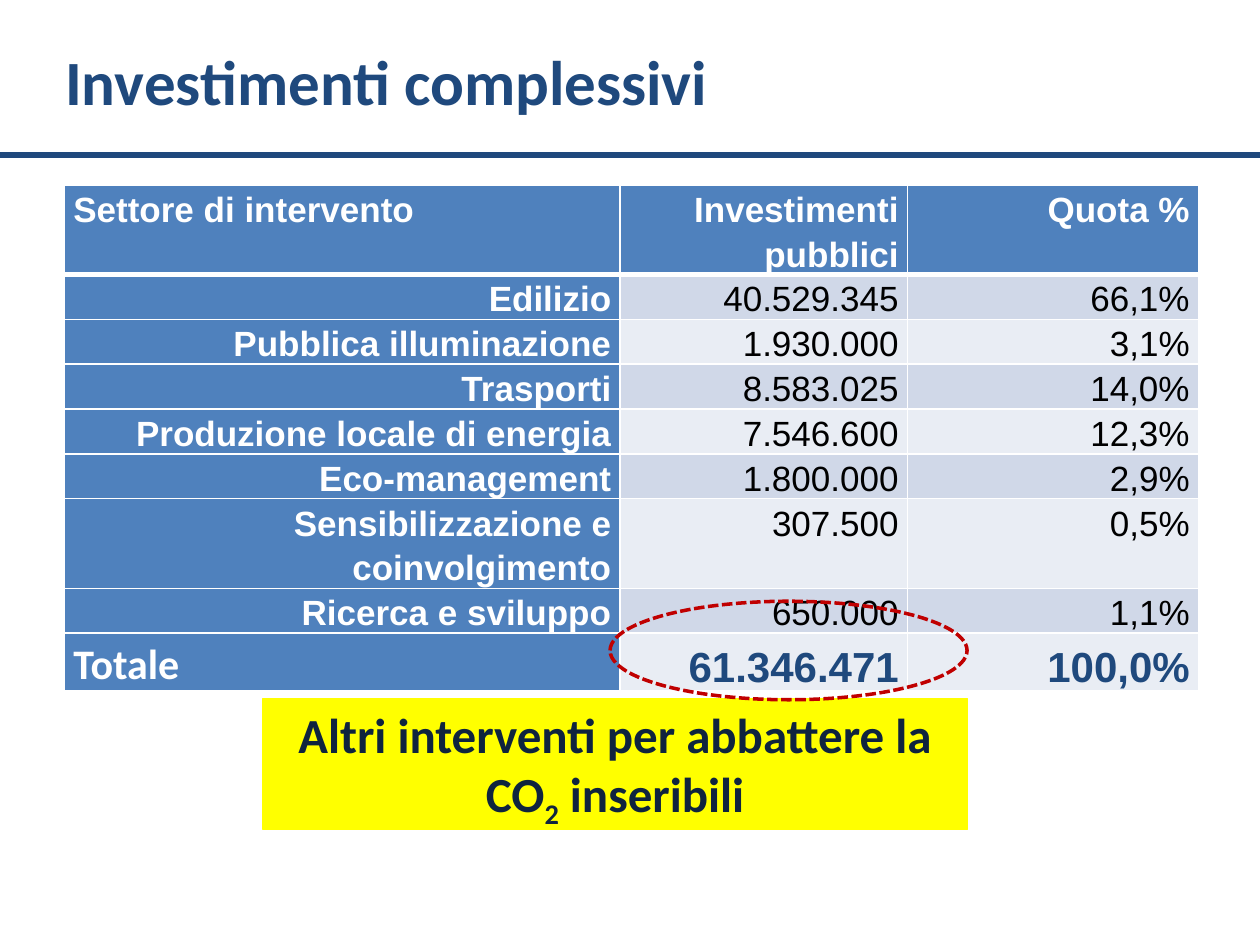
from lxml import etree
from pptx import Presentation
from pptx.dml.color import RGBColor
from pptx.enum.dml import MSO_LINE
from pptx.enum.shapes import MSO_CONNECTOR, MSO_SHAPE
from pptx.enum.text import MSO_ANCHOR, PP_ALIGN
from pptx.oxml.ns import qn
from pptx.util import Pt

LEFT, MID, RIGHT = PP_ALIGN.LEFT, PP_ALIGN.CENTER, PP_ALIGN.RIGHT
TOP, CENTER = MSO_ANCHOR.TOP, MSO_ANCHOR.MIDDLE
DASH = MSO_LINE.SQUARE_DOT
OVAL, STRAIGHT = MSO_SHAPE.OVAL, MSO_CONNECTOR.STRAIGHT

COLORS = {
    "white": "FFFFFF", "black": "000000", "navy": "1F497D", "dark": "0F243E",
    "blue": "4F81BD", "odd": "D0D8E8", "even": "E9EDF4",
    "yellow": "FFFF00", "red": "C00000",
}
TITLE = {"name": "Calibri", "size": Pt(36), "bold": True}
NOTE = {"name": "Calibri", "size": Pt(28), "bold": True}
HEAD = {"name": "Arial", "size": Pt(20), "bold": True}
BODY = {"name": "Arial", "size": Pt(20), "bold": False}
TOTAL = {"name": "Arial", "size": Pt(24), "bold": True}
LABEL = {"name": "Calibri", "size": Pt(24), "bold": True}
INSET = {"margin_left": Pt(5), "margin_right": Pt(5),
         "margin_top": 0, "margin_bottom": 0}

LINE, LAST = 25.6, 33
COLS = [317.5, 164.2, 166.3]
LINES = [2, 1, 1, 1, 1, 1, 2, 1]
HEIGHTS = [LINE * count for count in LINES] + [LAST]
ROWS = [
    ("Settore di intervento", "Investimenti\npubblici", "Quota %"),
    ("Edilizio", "40.529.345", "66,1%"),
    ("Pubblica illuminazione", "1.930.000", "3,1%"),
    ("Trasporti", "8.583.025", "14,0%"),
    ("Produzione locale di energia", "7.546.600", "12,3%"),
    ("Eco-management", "1.800.000", "2,9%"),
    ("Sensibilizzazione e coinvolgimento", "307.500", "0,5%"),
    ("Ricerca e sviluppo", "650.000", "1,1%"),
    ("Totale", "61.346.471", "100,0%"),
]


def rgb(key):
    """Return the named color."""
    return RGBColor.from_string(COLORS[key])


def apply(item, form):
    """Set each format value on the item."""
    for key, val in form.items():
        setattr(item, key, val)


def paint(item, key):
    """Give the item a solid fill."""
    item.fill.solid()
    item.fill.fore_color.rgb = rgb(key)


def stroke(line, key, width):
    """Set the color and width of a line."""
    line.color.rgb = rgb(key)
    line.width = Pt(width)


def add_run(para, text, form, key):
    """Add one formatted run."""
    run = para.add_run()
    run.text = text
    apply(run.font, form)
    run.font.color.rgb = rgb(key)
    return run


def add_box(slide, area, fill, anchor, align):
    """Add a filled text box and return it with its paragraph."""
    box = slide.shapes.add_textbox(*map(Pt, area))
    paint(box, fill)
    apply(box.text_frame, {"word_wrap": True, "vertical_anchor": anchor})
    para = box.text_frame.paragraphs[0]
    para.alignment = align
    return box, para


def add_rule(slide, y):
    """Draw the line under the title across the slide."""
    rule = slide.shapes.add_connector(STRAIGHT, 0, Pt(y), Pt(720), Pt(y))
    stroke(rule.line, "navy", 3)
    etree.SubElement(rule._element.spPr, qn("a:effectLst"))


def add_edges(cell, widths):
    """Draw white borders on the four sides of a cell."""
    props = cell._tc.get_or_add_tcPr()
    for side, width in zip("LRTB", widths):
        edge = etree.SubElement(props, qn(f"a:ln{side}"), w=str(Pt(width)))
        fill = etree.SubElement(edge, qn("a:solidFill"))
        etree.SubElement(fill, qn("a:srgbClr"), val=COLORS["white"])


def cell_style(row, col):
    """Return the fill, font format, font color and alignment of a cell."""
    last = row == len(ROWS) - 1
    align = LEFT if col == 0 and (row == 0 or last) else RIGHT
    if row == 0 or col == 0:
        return "blue", LABEL if last else HEAD, "white", align
    fill = "odd" if row % 2 else "even"
    return (fill, TOTAL, "navy", align) if last else (fill, BODY, "black", align)


def fill_cell(cell, row, col, text):
    """Write and format one table cell."""
    fill, form, color, align = cell_style(row, col)
    apply(cell, INSET)
    add_edges(cell, (1, 1, 3 if row == 1 else 1, 3 if row == 0 else 1))
    paint(cell, fill)
    frame = cell.text_frame
    pitch = {LABEL["size"]: LAST}.get(form["size"], LINE)
    for num, part in enumerate(text.split("\n")):
        para = frame.add_paragraph() if num else frame.paragraphs[0]
        apply(para, {"alignment": align, "line_spacing": Pt(pitch),
                     "space_after": Pt(6 if row else 0)})
        add_run(para, part, form, color)


def add_grid(slide, x, y):
    """Add the table of investments by sector."""
    area = (x, y, sum(COLS), sum(HEIGHTS))
    shape = slide.shapes.add_table(len(ROWS), len(COLS), *map(Pt, area))
    table = shape.table
    for col, width in zip(table.columns, COLS):
        col.width = Pt(width)
    for row, texts in enumerate(ROWS):
        table.rows[row].height = Pt(HEIGHTS[row])
        for col, text in enumerate(texts):
            fill_cell(table.cell(row, col), row, col, text)


def add_note(slide, area):
    """Add the yellow note on further measures."""
    box, para = add_box(slide, area, "yellow", TOP, MID)
    stroke(box.line, "yellow", 0.75)
    add_run(para, "Altri interventi per abbattere la CO", NOTE, "dark")
    sub = add_run(para, "2", NOTE, "dark")
    sub._r.get_or_add_rPr().set("baseline", "-25000")
    add_run(para, " inseribili", NOTE, "dark")


def add_ring(slide, area):
    """Circle the total with a dashed ellipse."""
    ring = slide.shapes.add_shape(OVAL, *map(Pt, area))
    ring.shadow.inherit = False
    ring.fill.background()
    stroke(ring.line, "red", 2)
    ring.line.dash_style = DASH


def main():
    """Build and save the slide."""
    deck = Presentation()
    apply(deck, {"slide_width": Pt(720), "slide_height": Pt(540)})
    slide = deck.slides.add_slide(deck.slide_layouts[6])
    add_rule(slide, 88.6)
    para = add_box(slide, (30.2, 20.6, 641.5, 51), "white", CENTER, LEFT)[1]
    add_run(para, "Investimenti complessivi", TITLE, "navy")
    add_grid(slide, 36.9, 105.6)
    add_note(slide, (150.2, 399, 402.5, 75))
    add_ring(slide, (348.6, 343.6, 204, 56.3))
    deck.save("out.pptx")


if __name__ == "__main__":
    main()
